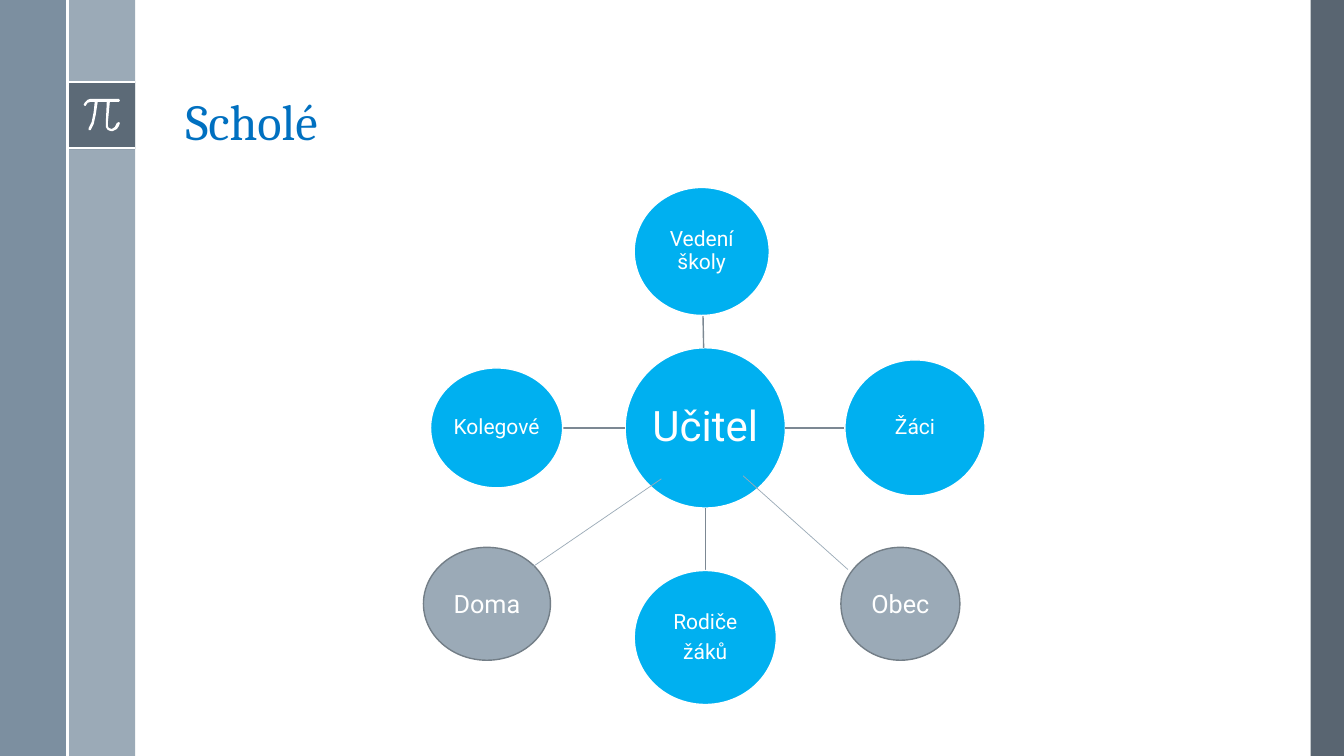
import math
from dataclasses import dataclass

import pptx
import pptx.dml.color
import pptx.enum.shapes
import pptx.enum.text
import pptx.oxml
import pptx.oxml.ns
import pptx.util
from pptx.util import Inches

TITLE = "Scholé"

# Circles: lines of text, (left, top, width, height) in inches
TEACHER = (["Učitel"], (6.2, 3.45, 1.59, 1.59))
SCHOOL_CIRCLES = [
    (["Vedení školy"], (6.29, 1.86, 1.34, 1.27)),
    (["Žáci"], (8.38, 3.57, 1.39, 1.35)),
    (["Rodiče", "žáků"], (6.29, 5.66, 1.41, 1.33)),
    (["Kolegové"], (4.27, 3.65, 1.31, 1.19)),
]
OUTSIDE_CIRCLES = [
    (["Obec"], (8.34, 5.43, 1.18, 1.12)),
    (["Doma"], (4.2, 5.43, 1.26, 1.12)),
]
OUTSIDE_LINKS = [((5.2, 5.68), (6.56, 4.75)), ((7.37, 4.72), (8.41, 5.65))]

PI_OUTLINE = [
    (1.18, 0.98), (0.9, 0.98), (0.87, 0.99), (0.84, 1.02), (0.83, 1.04),
    (0.84, 1.05), (0.85, 1.05), (0.87, 1.02), (0.9, 1.01), (0.94, 1.01),
    (0.93, 1.11), (0.91, 1.21), (0.88, 1.27), (0.88, 1.29), (0.9, 1.29),
    (0.93, 1.23), (0.95, 1.14), (0.97, 1.01), (1.06, 1.01), (1.05, 1.22),
    (1.05, 1.26), (1.07, 1.29), (1.1, 1.3), (1.12, 1.3), (1.16, 1.28),
    (1.18, 1.25), (1.19, 1.22), (1.18, 1.21), (1.16, 1.22), (1.14, 1.26),
    (1.11, 1.28), (1.08, 1.27), (1.07, 1.25), (1.07, 1.22), (1.09, 1.01),
    (1.18, 1.01), (1.19, 1),
]


@dataclass(frozen=True)
class Theme:
    title_font: str = "Cambria"
    body_font: str = "Roboto"
    title_size: float = 36
    teacher_size: float = 30
    school_size: float = 15
    outside_size: float = 18
    title: str = "0070C0"
    white: str = "FFFFFF"
    school: str = "00B0F0"
    outside: str = "9BAAB7"
    outside_edge: str = "737E87"
    spoke: str = "7C8893"
    dark: str = "475562"
    slate: str = "6A8093"


THEME = Theme()

# Side bands: (left, top, width, height), colour, opacity in percent
BANDS = [
    ((13, 0, 0.33, 7.5), THEME.dark, 90),
    ((0.67, 0, 0.67, 7.5), THEME.outside, 100),
    ((0, 0, 0.67, 7.5), THEME.slate, 88),
    ((0.67, 0.81, 0.67, 0.67), THEME.dark, 75),
]
BAND_RULES = [((0.67, 0.81), (1.34, 0.81)), ((0.67, 1.47), (1.34, 1.47)),
              ((0.67, 0), (0.67, 7.5))]


def rgb(colour):
    return pptx.dml.color.RGBColor.from_string(colour)


def paint(shape, fill, edge=None, opacity=100):
    shape.shadow.inherit = False
    shape.fill.solid()
    shape.fill.fore_color.rgb = rgb(fill)
    if opacity < 100:
        colour = shape.fill._xPr.find(".//" + pptx.oxml.ns.qn("a:srgbClr"))
        alpha = pptx.oxml.parse_xml(
            f'<a:alpha {pptx.oxml.ns.nsdecls("a")} val="{opacity * 1000}"/>')
        colour.append(alpha)
    if edge:
        shape.line.color.rgb = rgb(edge)
        shape.line.width = pptx.util.Pt(1)
    else:
        shape.line.fill.background()


def add_preset(slide, kind, box):
    return slide.shapes.add_shape(kind, *map(Inches, box))


def add_link(slide, start, end, colour, width):
    link = slide.shapes.add_connector(
        pptx.enum.shapes.MSO_CONNECTOR.STRAIGHT, *map(Inches, (*start, *end)))
    link.line.color.rgb = rgb(colour)
    link.line.width = pptx.util.Pt(width)
    link._element.spPr.append(pptx.oxml.parse_xml(
        f'<a:effectLst {pptx.oxml.ns.nsdecls("a")}/>'))


def style_run(run, font, size, colour):
    run.font.name = font
    run.font.size = pptx.util.Pt(size)
    run.font.color.rgb = rgb(colour)


def add_circle(slide, circle, fill, edge, size, inset, line_spacing):
    lines, box = circle
    oval = add_preset(slide, pptx.enum.shapes.MSO_SHAPE.OVAL, box)
    paint(oval, fill, edge)
    frame = oval.text_frame
    frame.word_wrap = True
    frame.vertical_anchor = pptx.enum.text.MSO_ANCHOR.MIDDLE
    frame.margin_left = frame.margin_right = Inches(inset)
    frame.margin_top = frame.margin_bottom = Inches(inset)
    frame.text = "\n".join(lines)
    for paragraph in frame.paragraphs:
        paragraph.alignment = pptx.enum.text.PP_ALIGN.CENTER
        paragraph.line_spacing = line_spacing
        if len(lines) > 1:
            paragraph.space_after = pptx.util.Pt(0.35 * size)
        style_run(paragraph.runs[0], THEME.body_font, size, THEME.white)


def centre(box):
    left, top, width, height = box
    return left + width / 2, top + height / 2


def edge_towards(box, target):
    """Point where the oval in box meets the line from its centre to target."""
    x, y = centre(box)
    dx, dy = target[0] - x, target[1] - y
    reach = 1 / math.hypot(dx / (box[2] / 2), dy / (box[3] / 2))
    return x + dx * reach, y + dy * reach


def add_side_bands(slide):
    for box, colour, opacity in BANDS:
        band = add_preset(slide, pptx.enum.shapes.MSO_SHAPE.RECTANGLE, box)
        paint(band, colour, opacity=opacity)
    for start, end in BAND_RULES:
        add_link(slide, start, end, THEME.white, 1.5)
    first, *rest = [(Inches(x), Inches(y)) for x, y in PI_OUTLINE]
    outline = slide.shapes.build_freeform(*first)
    outline.add_line_segments(rest, close=True)
    paint(outline.convert_to_shape(), THEME.white)


def add_title(slide):
    title = slide.shapes.title
    title.left, title.top, title.width, title.height = map(
        Inches, (1.74, 0.19, 10.7, 1.36))
    frame = title.text_frame
    frame.text = TITLE
    frame.auto_size = pptx.enum.text.MSO_AUTO_SIZE.NONE
    frame.vertical_anchor = pptx.enum.text.MSO_ANCHOR.BOTTOM
    paragraph = frame.paragraphs[0]
    paragraph.alignment = pptx.enum.text.PP_ALIGN.LEFT
    paragraph.line_spacing = 0.9
    style_run(paragraph.runs[0], THEME.title_font, THEME.title_size, THEME.title)


def add_diagram(slide):
    hub = TEACHER[1]
    add_circle(slide, TEACHER, THEME.school, THEME.white,
               THEME.teacher_size, 0.02, 0.9)
    for circle in SCHOOL_CIRCLES:
        box = circle[1]
        add_link(slide, edge_towards(hub, centre(box)),
                 edge_towards(box, centre(hub)), THEME.spoke, 1)
        add_circle(slide, circle, THEME.school, THEME.white,
                   THEME.school_size, 0.01, 0.9)
    for circle in OUTSIDE_CIRCLES:
        add_circle(slide, circle, THEME.outside, THEME.outside_edge,
                   THEME.outside_size, 0.05, 1.0)
    for start, end in OUTSIDE_LINKS:
        add_link(slide, start, end, THEME.outside, 0.5)


def main():
    deck = pptx.Presentation()
    deck.slide_width, deck.slide_height = Inches(13.33), Inches(7.5)
    slide = deck.slides.add_slide(deck.slide_layouts[5])
    add_side_bands(slide)
    add_title(slide)
    add_diagram(slide)
    deck.save("out.pptx")


if __name__ == "__main__":
    main()
